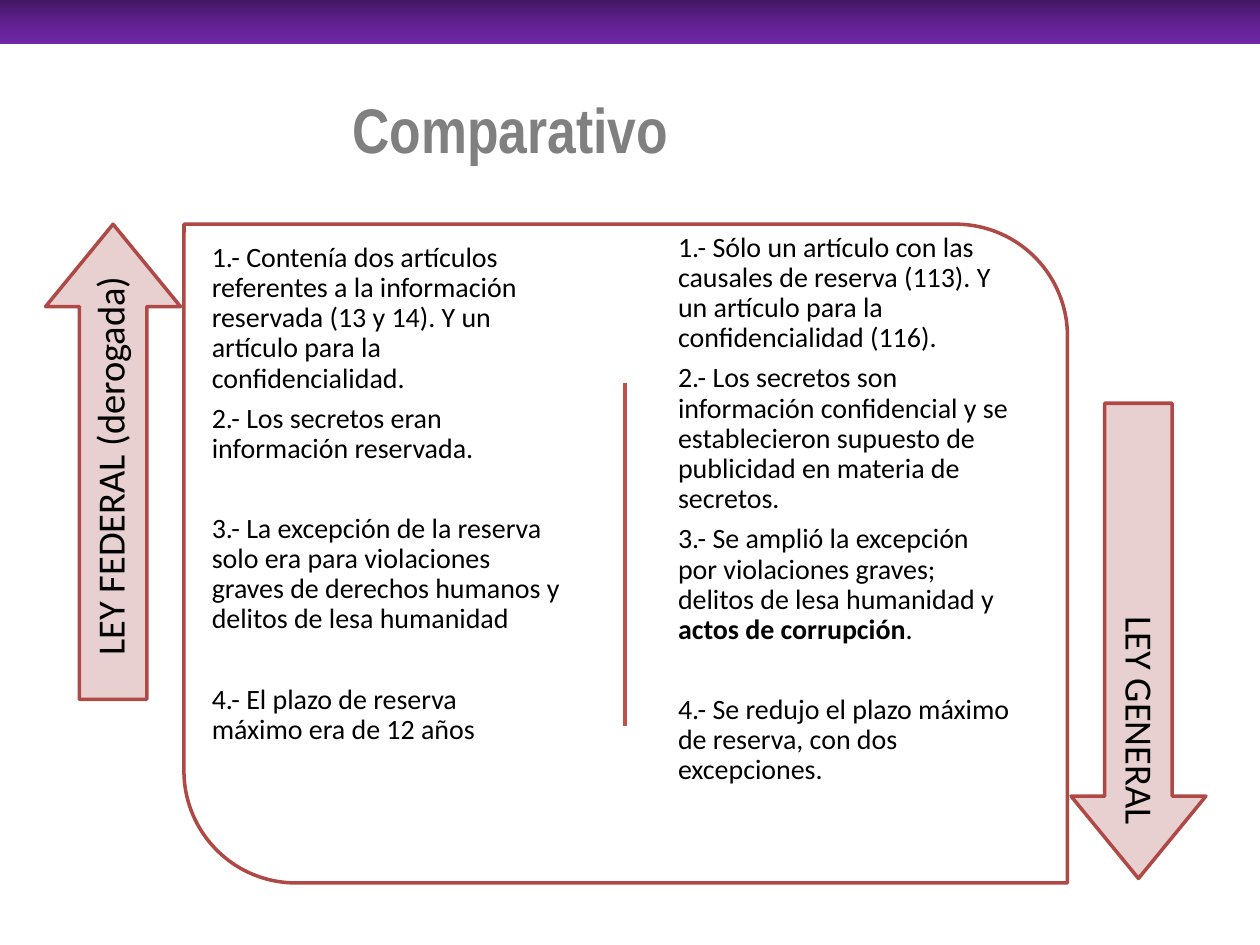
"""Build the comparison slide between the federal law and the general law."""
import copy
import dataclasses

import lxml.etree
import pptx
import pptx.dml.color
import pptx.enum.shapes
import pptx.enum.text
import pptx.oxml.ns
import pptx.util

Cm = pptx.util.Cm
Pt = pptx.util.Pt
Shape = pptx.enum.shapes.MSO_SHAPE
Align = pptx.enum.text.PP_ALIGN
Anchor = pptx.enum.text.MSO_ANCHOR

COLOURS = {
    "banner_dark": "431764",
    "banner_middle": "5F218E",
    "banner_light": "7128A8",
    "title": "808080",
    "text": "000000",
    "panel": "FFFFFF",
    "outline": "AE4946",
    "divider": "C0504D",
    "arrow": "E8D0D0",
}
LINE_SPACING = 0.9
SPACE_SHARE = 0.35
BODY_SIZE = 16
LABEL_SIZE = 22
POINT_GAP = 5.6
WIDE_GAP = 28.5


@dataclasses.dataclass(frozen=True)
class Frame:
    """Place and size in centimetres, with a rotation in degrees."""

    left: float
    top: float
    width: float
    height: float
    rotation: int = 0

    def lengths(self) -> tuple:
        """Return the four lengths."""
        return tuple(Cm(n) for n in (self.left, self.top, self.width, self.height))


@dataclasses.dataclass(frozen=True)
class Point:
    """One compared point, with an optional bold part and ending."""

    text: str
    bold: str = ""
    ending: str = ""
    gap: float = POINT_GAP


@dataclasses.dataclass(frozen=True)
class Column:
    """The points about one law."""

    frame: Frame
    points: tuple[Point, ...]


@dataclasses.dataclass(frozen=True)
class LawArrow:
    """An arrow with the name of a law."""

    frame: Frame
    label_frame: Frame
    label: str


COLUMNS = (
    Column(
        Frame(4.09, 4.72, 7.47, 7.44),
        (
            Point("1.- Contenía dos artículos referentes a la información reservada "
                  "(13 y 14). Y un artículo para la confidencialidad."),
            Point("2.- Los secretos eran información reservada.", gap=WIDE_GAP),
            Point("3.- La excepción de la reserva solo era para violaciones graves "
                  "de derechos humanos y delitos de lesa humanidad", gap=WIDE_GAP),
            Point("4.- El plazo de reserva\vmáximo era de 12 años"),
        ),
    ),
    Column(
        Frame(13.49, 4.52, 7.06, 13.28),
        (
            Point("1.- Sólo un artículo con las causales de reserva (113). "
                  "Y un artículo para la confidencialidad (116)."),
            Point("2.- Los secretos son información confidencial y se establecieron "
                  "supuesto de publicidad en materia de secretos."),
            Point("3.- Se amplió la excepción por violaciones graves; delitos de lesa "
                  "humanidad y ", "actos de corrupción", ".", WIDE_GAP),
            Point("4.- Se redujo el plazo máximo de reserva, con dos excepciones."),
        ),
    ),
)
ARROWS = (
    LawArrow(Frame(-2.51, 7.95, 9.58, 2.72, 270),
             Frame(-2.11, 9.04, 8.74, 1.35, 270), "LEY FEDERAL (derogada)"),
    LawArrow(Frame(18.16, 11.56, 9.58, 2.72, 90),
             Frame(18.57, 11.81, 8.74, 1.35, 90), "LEY GENERAL"),
)


def colour(name: str) -> pptx.dml.color.RGBColor:
    """Return a named colour."""
    return pptx.dml.color.RGBColor.from_string(COLOURS[name])


def set_font(font, name: str, size: float, colour_name: str) -> None:
    """Set the face, size and colour of a font."""
    font.name = name
    font.size = Pt(size)
    font.color.rgb = colour(colour_name)


def add_banner(page) -> None:
    """Draw the gradient band at the top."""
    banner = page.shapes.add_shape(Shape.RECTANGLE, *Frame(0, 0, 25.4, 0.89).lengths())
    banner.shadow.inherit = False
    banner.line.fill.background()
    banner.fill.gradient()
    banner.fill.gradient_angle = 270
    first = banner._element.spPr.find(".//" + pptx.oxml.ns.qn("a:gs"))
    first.addnext(copy.deepcopy(first))
    names = ("banner_dark", "banner_middle", "banner_light")
    for index, (stop, name) in enumerate(zip(banner.fill.gradient_stops, names)):
        stop.position = index / 2
        stop.color.rgb = colour(name)


def add_outlined(page, kind, frame: Frame, fill: str, adjustments: tuple):
    """Draw a filled shape with the red outline."""
    shape = page.shapes.add_shape(kind, *frame.lengths())
    shape.rotation = frame.rotation
    shape.shadow.inherit = False
    shape.fill.solid()
    shape.fill.fore_color.rgb = colour(fill)
    shape.line.color.rgb = colour("outline")
    shape.line.width = Pt(2)
    for index, value in enumerate(adjustments):
        shape.adjustments[index] = value


def add_text_frame(page, frame: Frame, margin: float, anchor):
    """Add a wrapping text box and return its text frame."""
    box = page.shapes.add_textbox(*frame.lengths())
    box.rotation = frame.rotation
    text = box.text_frame
    text.word_wrap = True
    text.vertical_anchor = anchor
    text.margin_left = text.margin_right = Cm(margin)
    text.margin_top = text.margin_bottom = Cm(margin)
    return text


def add_title(page) -> None:
    """Write the title."""
    text = add_text_frame(page, Frame(-1.14, 1.68, 22.86, 1.8), 0.13, Anchor.MIDDLE)
    para = text.paragraphs[0]
    para.text = "Comparativo"
    para.alignment = Align.CENTER
    set_font(para.font, "Arial Narrow", 36, "title")
    para.font.bold = True


def add_divider(page) -> None:
    """Draw the line between the columns."""
    line = page.shapes.add_connector(
        pptx.enum.shapes.MSO_CONNECTOR.STRAIGHT, Cm(12.6), Cm(7.72), Cm(12.6), Cm(14.63))
    line.line.color.rgb = colour("divider")
    line.line.width = Pt(2)
    lxml.etree.SubElement(line._element.spPr, pptx.oxml.ns.qn("a:effectLst"))


def add_column(page, column: Column) -> None:
    """Write the points of one law."""
    text = add_text_frame(page, column.frame, 0.18, Anchor.TOP)
    for index, point in enumerate(column.points):
        para = text.add_paragraph() if index else text.paragraphs[0]
        para.text = point.text
        if point.bold:
            span = para.add_run()
            span.text = point.bold
            span.font.bold = True
            para.add_run().text = point.ending
        para.line_spacing = LINE_SPACING
        para.space_after = Pt(point.gap)
        set_font(para.font, "Calibri", BODY_SIZE, "text")


def add_law_arrow(page, arrow: LawArrow) -> None:
    """Draw an arrow and its label."""
    add_outlined(page, Shape.RIGHT_ARROW, arrow.frame, "arrow", (0.5, 0.61))
    para = add_text_frame(page, arrow.label_frame, 0.23, Anchor.MIDDLE).paragraphs[0]
    para.text = arrow.label
    para.alignment = Align.RIGHT
    para.line_spacing = LINE_SPACING
    para.space_after = Pt(LABEL_SIZE * SPACE_SHARE)
    set_font(para.font, "Calibri", LABEL_SIZE, "text")


def main() -> None:
    """Build and save the deck."""
    deck = pptx.Presentation()
    deck.slide_width, deck.slide_height = Cm(25.4), Cm(19.05)
    page = deck.slides.add_slide(deck.slide_layouts[6])
    add_banner(page)
    add_title(page)
    add_outlined(page, Shape.ROUND_2_DIAG_RECTANGLE,
                 Frame(3.71, 4.52, 17.81, 13.28), "panel", (0, 0.17))
    add_divider(page)
    for column in COLUMNS:
        add_column(page, column)
    for arrow in ARROWS:
        add_law_arrow(page, arrow)
    deck.save("out.pptx")


if __name__ == "__main__":
    main()
